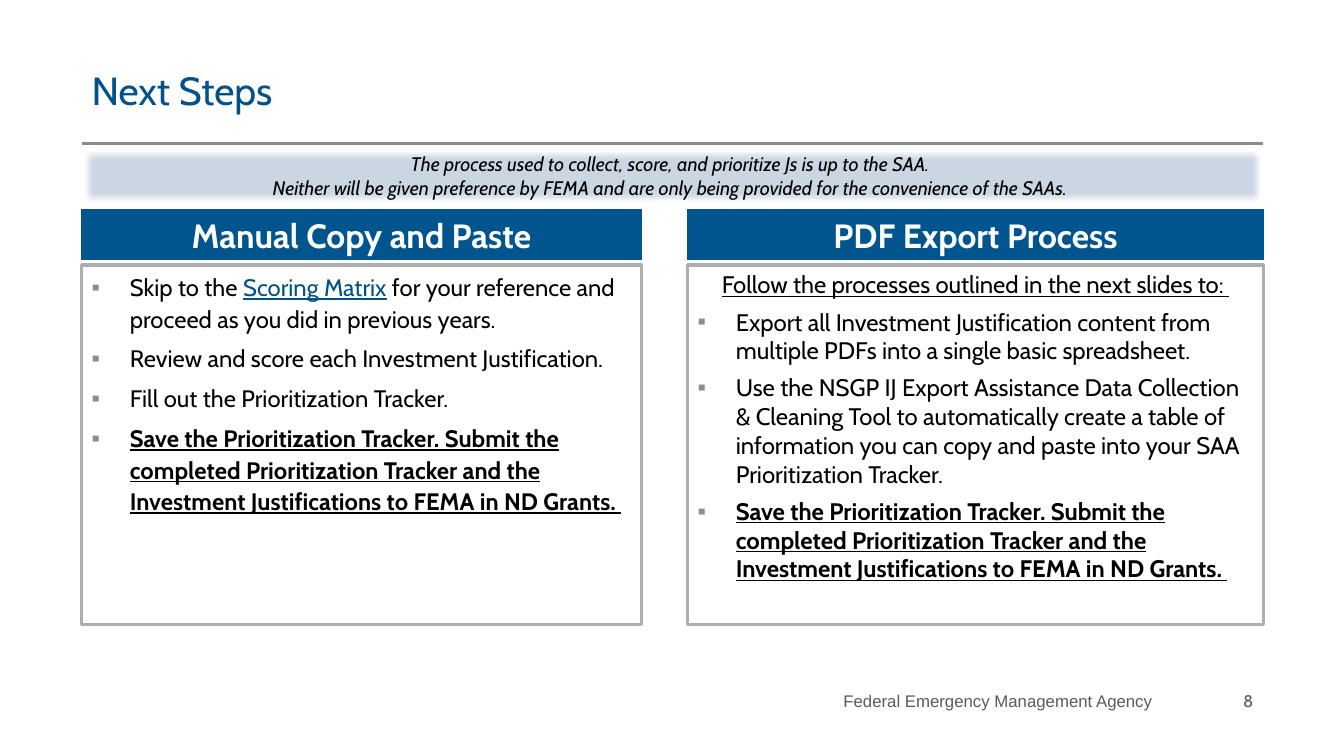
"""Build the Next Steps slide comparing two ways to prioritize applications."""
from dataclasses import dataclass

from lxml import etree
from pptx import Presentation
from pptx.dml.color import RGBColor
from pptx.enum.shapes import MSO_CONNECTOR, MSO_SHAPE
from pptx.enum.text import MSO_ANCHOR, PP_ALIGN
from pptx.oxml.ns import qn
from pptx.util import Pt

PX = 9144
LEFT, CENTER, RIGHT = PP_ALIGN.LEFT, PP_ALIGN.CENTER, PP_ALIGN.RIGHT
TOP, MIDDLE = MSO_ANCHOR.TOP, MSO_ANCHOR.MIDDLE
RECTANGLE, STRAIGHT = MSO_SHAPE.RECTANGLE, MSO_CONNECTOR.STRAIGHT
COLORS = {
    "title": "005288", "header": "00558E", "link": "005188", "banner": "CBD6E3",
    "border": "AEAEAE", "rule": "8A8C8F", "footer": "5A5B5D",
    "black": "000000", "white": "FFFFFF",
}
MARGIN, CONTENT_WIDTH = 81, 1172
HEADER_TOP, HEADER_HEIGHT = 208, 50
BODY_TOP, BODY_HEIGHT = 263, 357
FOOTER_TOP, FOOTER_HEIGHT = 675, 40
INDENT = 38


@dataclass(frozen=True)
class Span:
    text: str
    color: str = "black"
    bold: bool = False
    italic: bool = False
    underline: bool = False


@dataclass(frozen=True)
class Para:
    spans: list[Span]
    align: PP_ALIGN = LEFT
    bullet: bool = False
    space_after: int = 0


@dataclass(frozen=True)
class Style:
    size: float
    font: str = "Cabin"
    spacing: float = 1.0
    anchor: MSO_ANCHOR = TOP


@dataclass(frozen=True)
class Box:
    left: int
    top: int
    width: int
    height: int
    paras: list[Para]
    style: Style
    fill: str = ""
    line: str = ""
    line_width: float = 0.75


@dataclass(frozen=True)
class Column:
    left: int
    width: int
    heading: str
    paras: list[Para]
    style: Style


def rgb(name: str) -> RGBColor:
    return RGBColor.from_string(COLORS[name])


def bullet(*spans: Span) -> Para:
    return Para(list(spans), bullet=True, space_after=6)


def add_bullet(properties) -> None:
    properties.set("marL", str(INDENT * PX))
    properties.set("indent", str(-INDENT * PX))
    color = etree.SubElement(properties, qn("a:buClr"))
    etree.SubElement(color, qn("a:srgbClr"), val=COLORS["rule"])
    etree.SubElement(properties, qn("a:buFont"), typeface="Arial")
    etree.SubElement(properties, qn("a:buChar"), char="▪")


def write_text(frame, paras: list[Para], style: Style) -> None:
    frame.word_wrap = True
    frame.vertical_anchor = style.anchor
    for index, para in enumerate(paras):
        paragraph = frame.add_paragraph() if index else frame.paragraphs[0]
        paragraph.alignment = para.align
        if para.bullet:
            add_bullet(paragraph._p.get_or_add_pPr())
        paragraph.line_spacing = style.spacing
        paragraph.space_after = Pt(para.space_after)
        for span in para.spans:
            run = paragraph.add_run()
            run.text = span.text
            font = run.font
            font.name, font.size = style.font, Pt(style.size)
            font.bold, font.italic, font.underline = span.bold, span.italic, span.underline
            font.color.rgb = rgb(span.color)


def add_box(page, box: Box):
    frame = [value * PX for value in (box.left, box.top, box.width, box.height)]
    if box.fill or box.line:
        shape = page.shapes.add_shape(RECTANGLE, *frame)
        shape.shadow.inherit = False
        if box.fill:
            shape.fill.solid()
            shape.fill.fore_color.rgb = rgb(box.fill)
        else:
            shape.fill.background()
        if box.line:
            shape.line.color.rgb = rgb(box.line)
            shape.line.width = Pt(box.line_width)
        else:
            shape.line.fill.background()
    else:
        shape = page.shapes.add_textbox(*frame)
    write_text(shape.text_frame, box.paras, box.style)
    return shape


def add_rule(page, left: int, top: int, width: int) -> None:
    rule = page.shapes.add_connector(
        STRAIGHT, left * PX, top * PX, (left + width) * PX, top * PX)
    rule.line.color.rgb = rgb("rule")
    rule.line.width = Pt(2)
    etree.SubElement(rule._element.spPr, qn("a:effectLst"))


def add_column(page, column: Column) -> None:
    add_box(page, Box(column.left, BODY_TOP, column.width, BODY_HEIGHT, column.paras,
                      column.style, line="border", line_width=2.25))
    heading = Para([Span(column.heading, "white", bold=True)], CENTER)
    add_box(page, Box(column.left, HEADER_TOP, column.width, HEADER_HEIGHT, [heading],
                      Style(24), fill="header", line="header"))


SAVE_STEP = bullet(Span(
    "Save the Prioritization Tracker. Submit the completed Prioritization Tracker and the "
    "Investment Justifications to FEMA in ND Grants. ", bold=True, underline=True))
COLUMNS = [
    Column(MARGIN, 555, "Manual Copy and Paste", [
        bullet(Span("Skip to the "), Span("Scoring Matrix", "link", underline=True),
               Span(" for your reference and proceed as you did in previous years.")),
        bullet(Span("Review and score each Investment Justification.")),
        bullet(Span("Fill out the Prioritization Tracker.")),
        SAVE_STEP,
    ], Style(17, spacing=1.1)),
    Column(682, 571, "PDF Export Process", [
        Para([Span("Follow the processes outlined in the next slides to: ", underline=True)],
             CENTER, space_after=6),
        bullet(Span("Export all Investment Justification content from multiple PDFs into a "
                    "single basic spreadsheet.")),
        bullet(Span("Use the NSGP IJ Export Assistance Data Collection & Cleaning Tool to "
                    "automatically create a table of information you can copy and paste into "
                    "your SAA Prioritization Tracker.")),
        SAVE_STEP,
    ], Style(17.1)),
]
BANNER_LINES = [
    "The process used to collect, score, and prioritize Js is up to the SAA. ",
    "Neither will be given preference by FEMA and are only being provided for the "
    "convenience of the SAAs. ",
]
LABELS = [
    Box(MARGIN, 49, CONTENT_WIDTH, 81, [Para([Span("Next Steps", "title")])],
        Style(28, anchor=MIDDLE)),
    Box(667, FOOTER_TOP, 486, FOOTER_HEIGHT,
        [Para([Span("Federal Emergency Management Agency", "footer")], RIGHT)],
        Style(12, "Arial", anchor=MIDDLE)),
    Box(1153, FOOTER_TOP, 100, FOOTER_HEIGHT, [Para([Span("8", "footer")], RIGHT)],
        Style(12, anchor=MIDDLE)),
]


def main() -> None:
    deck = Presentation()
    deck.slide_width, deck.slide_height = 1333 * PX, 750 * PX
    page = deck.slides.add_slide(deck.slide_layouts[6])
    add_rule(page, MARGIN, 142, CONTENT_WIDTH)
    for label in LABELS:
        add_box(page, label)
    for column in COLUMNS:
        add_column(page, column)
    lines = [Para([Span(line, italic=True)], CENTER) for line in BANNER_LINES]
    banner = add_box(page, Box(MARGIN, 146, CONTENT_WIDTH, 57, lines, Style(14), fill="banner"))
    effects = banner._element.spPr.find(qn("a:effectLst"))
    etree.SubElement(effects, qn("a:softEdge"), rad=str(Pt(5)))
    deck.save("out.pptx")


if __name__ == "__main__":
    main()
